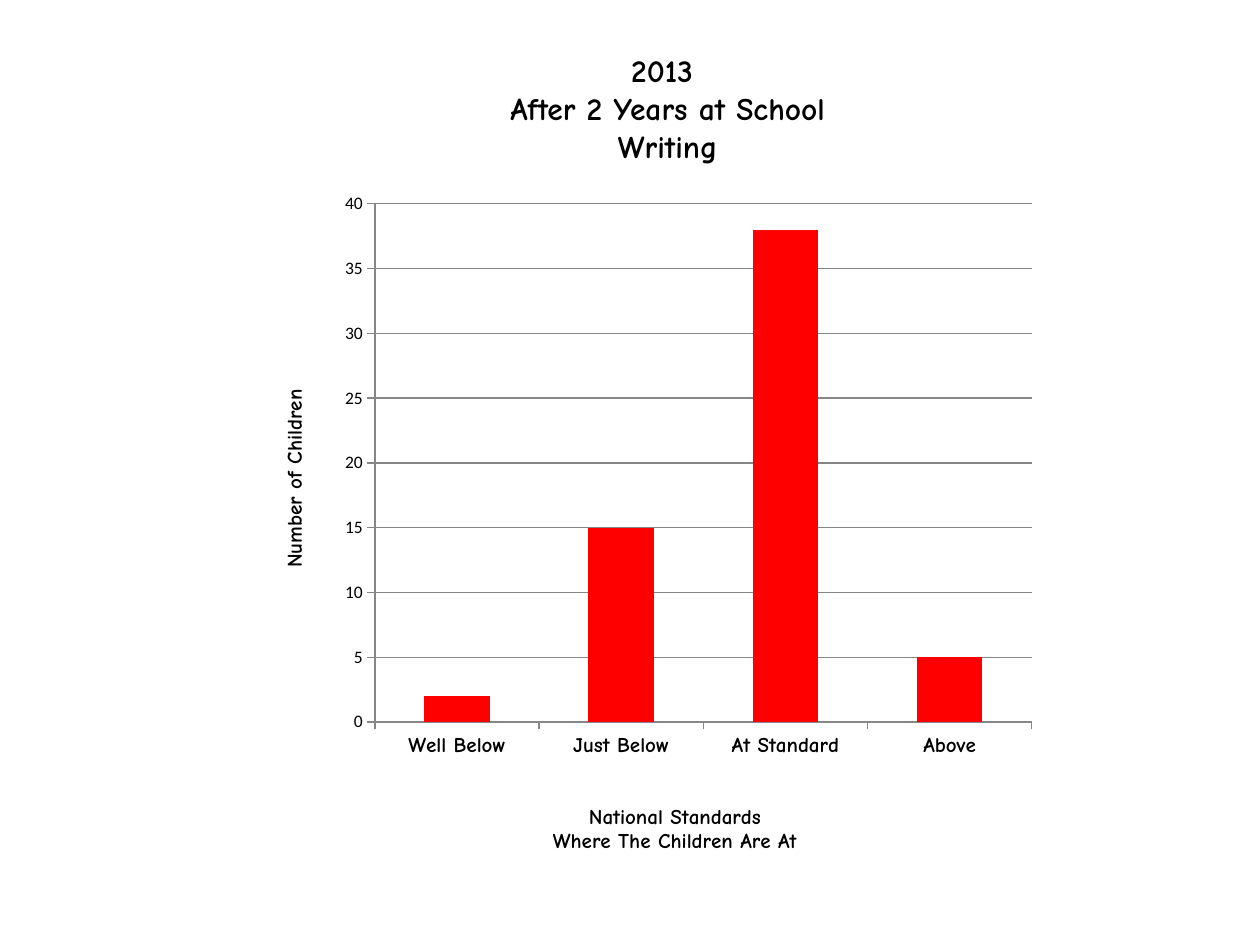
import pptx
import pptx.chart.data
import pptx.dml.color
import pptx.enum.chart
import pptx.enum.text
import pptx.oxml
import pptx.oxml.ns
import pptx.util

Cm, Pt = pptx.util.Cm, pptx.util.Pt
RGB = pptx.dml.color.RGBColor.from_string
HUES = {"text": "000000", "bar": "FF0000", "line": "868686"}
HAND = "Comic Neue"


def style(font, **look):
    """Apply font attributes and the text colour."""
    for key, val in look.items():
        setattr(font, key, val)
    font.color.rgb = RGB(HUES["text"])


def place(node, mark, **spots):
    """Put a manual chart layout after the child named mark, or first."""
    for old in node.findall(pptx.oxml.ns.qn("c:layout")):
        node.remove(old)
    parts = "".join(f'<c:{key} val="{val}"/>' for key, val in spots.items())
    layout = pptx.oxml.parse_xml(
        f'<c:layout {pptx.oxml.ns.nsdecls("c")}>'
        f"<c:manualLayout>{parts}</c:manualLayout></c:layout>")
    node.insert(1 if mark else 0, layout)


deck = pptx.Presentation()
deck.slide_width, deck.slide_height = Cm(25.4), Cm(19.05)
slide = deck.slides.add_slide(deck.slide_layouts[6])

# Chart
data = pptx.chart.data.CategoryChartData()
data.categories = ["Well Below", "Just Below", "At Standard", "Above"]
data.add_series("Series 1", [2, 15, 38, 5])
chart = slide.shapes.add_chart(
    pptx.enum.chart.XL_CHART_TYPE.COLUMN_CLUSTERED,
    Cm(4.9), Cm(3.12), Cm(16.41), Cm(15.01), data).chart
chart.has_legend = False
chart.has_title = False
style(chart.font, name="Calibri", size=Pt(10))

plot = chart.plots[0]
plot.gap_width = 150
plot.vary_by_categories = False
fill = plot.series[0].format.fill
fill.solid()
fill.fore_color.rgb = RGB(HUES["bar"])
area = chart.element.find(".//" + pptx.oxml.ns.qn("c:plotArea"))
place(area, False, layoutTarget="inner", xMode="edge", yMode="edge",
      x=0.162, y=0.066, w=0.807, h=0.696)

# Axes
cat, val = chart.category_axis, chart.value_axis
val.minimum_scale, val.maximum_scale, val.major_unit = 0, 40, 5
val.has_major_gridlines = True
style(cat.tick_labels.font, name=HAND, size=Pt(12), bold=True)
style(val.tick_labels.font, name="Calibri", size=Pt(10), bold=False)
for line in (cat.format.line, val.format.line, val.major_gridlines.format.line):
    line.color.rgb = RGB(HUES["line"])
    line.width = Pt(0.75)

names = [(cat, ["National Standards", "Where The Children Are At"], 0.376, 0.867),
         (val, ["Number of Children"], 0.042, 0.31)]
for axis, lines, left, top in names:
    axis.major_tick_mark = pptx.enum.chart.XL_TICK_MARK.OUTSIDE
    axis.has_title = True
    frame = axis.axis_title.text_frame
    frame.text = "\n".join(lines)
    for para in frame.paragraphs:
        style(para.font, name=HAND, size=Pt(12), bold=True)
        for run in para.runs:
            style(run.font, name=HAND, size=Pt(12), bold=True)
    place(axis.axis_title._element, True, xMode="edge", yMode="edge",
          x=left, y=top)
val.axis_title.text_frame._txBody.bodyPr.set("rot", "-5400000")
val.axis_title.text_frame._txBody.bodyPr.set("vert", "horz")

# Heading
box = slide.shapes.add_textbox(Cm(7.11), Cm(0.91), Cm(12.7), Cm(2.57))
frame = box.text_frame
frame.word_wrap = True
para = frame.paragraphs[0]
para.text = "2013 \vAfter 2 Years at School\vWriting"
para.alignment = pptx.enum.text.PP_ALIGN.CENTER
for run in para.runs:
    style(run.font, name=HAND, size=Pt(18), bold=True)

deck.save("out.pptx")
